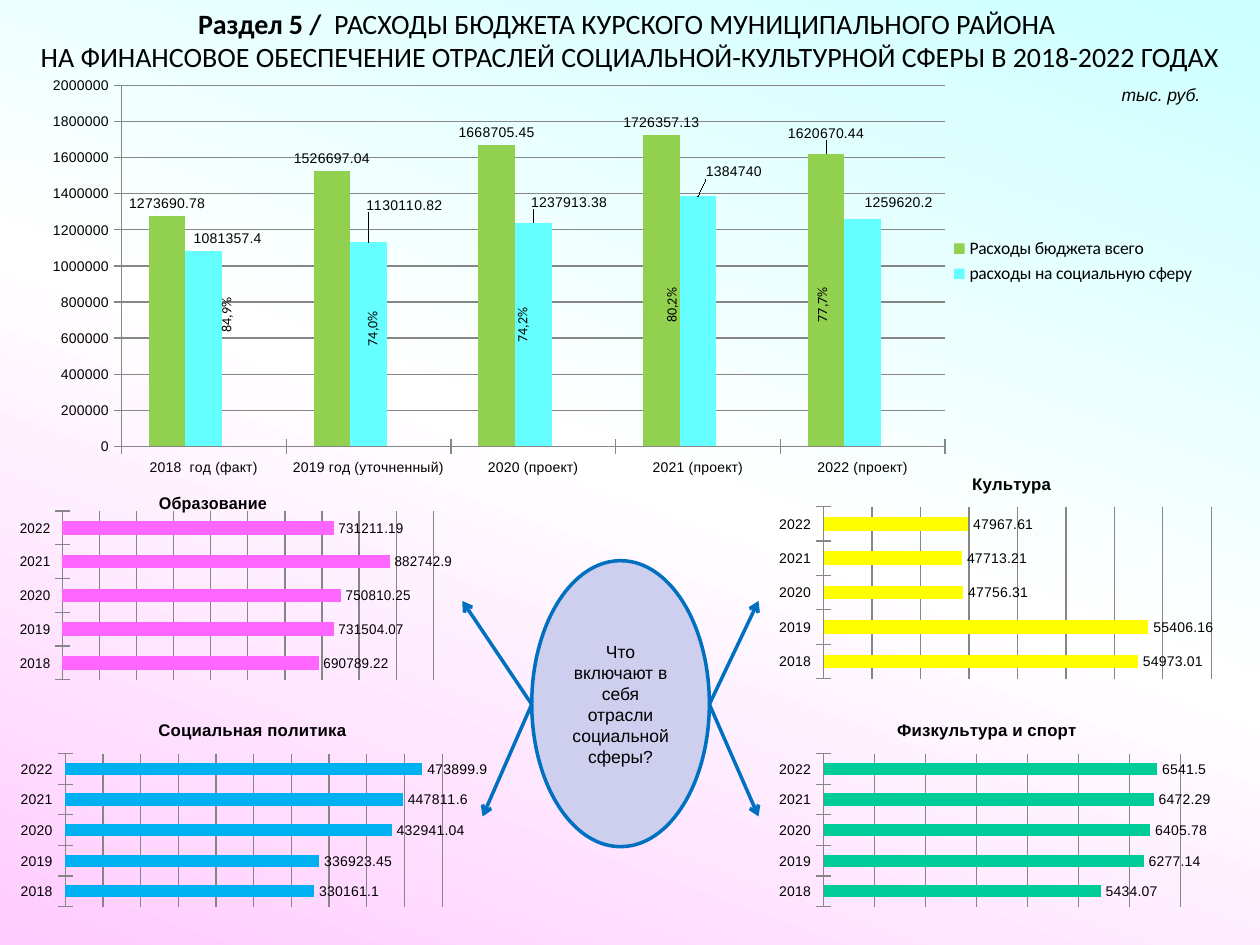
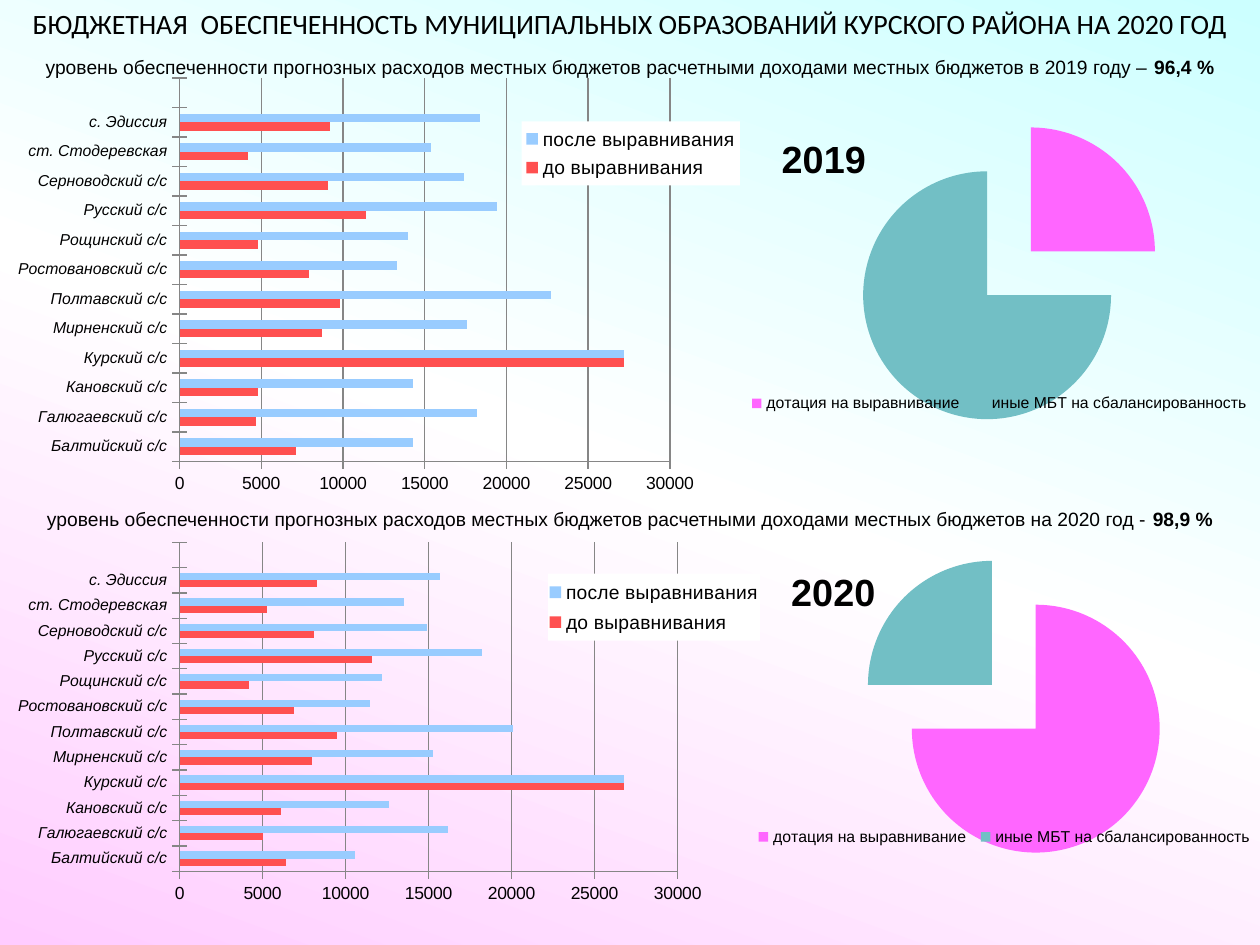
from lxml import etree
from pptx import Presentation
from pptx.chart.data import CategoryChartData
from pptx.dml.color import RGBColor
from pptx.enum.chart import XL_CHART_TYPE as ChartType
from pptx.enum.chart import XL_LABEL_POSITION as LabelPosition
from pptx.enum.chart import XL_LEGEND_POSITION as LegendPosition
from pptx.enum.chart import XL_TICK_MARK as TickMark
from pptx.enum.shapes import MSO_CONNECTOR as Connector
from pptx.enum.shapes import MSO_SHAPE as Shape
from pptx.enum.text import MSO_ANCHOR as Anchor
from pptx.enum.text import MSO_AUTO_SIZE as AutoSize
from pptx.enum.text import PP_ALIGN as Align
from pptx.oxml.ns import qn
from pptx.util import Emu, Pt

PX = 9144  # 100 px to the inch
COLORS = {
    "text": "000000", "white": "FFFFFF", "grid": "868686",
    "sky": "CCFFFF", "rose": "FFCCFF",
    "total": "92D050", "social": "66FFFF",
    "education": "FF66FF", "culture": "FFFF00", "policy": "00B0F0", "sport": "00CC99",
    "before": "FF5050", "after": "99CCFF",
    "grant": "FF66FF", "other": "72BFC5",
    "oval": "CECEEF", "arrow": "0070C0",
}
YEARS = ["2018", "2019", "2020", "2021", "2022"]
SETTLEMENTS = [
    "Балтийский с/с", "Галюгаевский с/с", "Кановский с/с", "Курский с/с",
    "Мирненский с/с", "Полтавский с/с", "Ростовановский с/с", "Рощинский с/с",
    "Русский с/с", "Серноводский с/с", "ст. Стодеревская", "с. Эдиссия",
]


def px(*lengths):
    return [Emu(length * PX) for length in lengths]


def rgb(name):
    return RGBColor.from_string(COLORS[name])


def style_font(font, size, face="Arial", bold=None, italic=None):
    font.size, font.name = Pt(size), face
    font.bold, font.italic = bold, italic
    font.color.rgb = rgb("text")


def add_runs(paragraph, runs, size, face="Arial", align=Align.CENTER, italic=None):
    """Each run is a (text, bold) pair."""
    paragraph.alignment = align
    for text, bold in runs:
        run = paragraph.add_run()
        run.text = text
        style_font(run.font, size, face, bold, italic)


# Slide parts

def set_background(master):
    fill = master.background.fill
    fill.gradient()
    fill.gradient_angle = 250
    stops = master._element.find(".//" + qn("a:gsLst"))
    for stop in list(stops):
        stops.remove(stop)
    for place, name in ((0, "sky"), (50, "white"), (100, "rose")):
        stop = etree.SubElement(stops, qn("a:gs"), pos=str(place * 1000))
        etree.SubElement(stop, qn("a:srgbClr"), val=COLORS[name])


def add_titled_slide(prs, height, lines):
    slide = prs.slides.add_slide(prs.slide_layouts[5])
    title = slide.shapes.title
    title.left, title.top, title.width, title.height = px(0, 0, 1000, height)
    frame = title.text_frame
    frame.vertical_anchor, frame.auto_size = Anchor.TOP, AutoSize.NONE
    for i, runs in enumerate(lines):
        paragraph = frame.paragraphs[0] if i == 0 else frame.add_paragraph()
        add_runs(paragraph, runs, 16, "Calibri")
    return slide


def add_text(slide, box, runs, size, rotation=0, **style):
    label = slide.shapes.add_textbox(*px(*box))
    label.rotation = rotation
    label.text_frame.word_wrap = True
    add_runs(label.text_frame.paragraphs[0], runs, size, **style)


def add_oval(slide, box, text):
    oval = slide.shapes.add_shape(Shape.OVAL, *px(*box))
    oval.shadow.inherit = False
    oval.fill.solid()
    oval.fill.fore_color.rgb = rgb("oval")
    oval.line.color.rgb, oval.line.width = rgb("arrow"), Pt(2)
    oval.text_frame.vertical_anchor = Anchor.MIDDLE
    oval.text_frame.word_wrap = True
    add_runs(oval.text_frame.paragraphs[0], [(text, None)], 10)


def add_arrow(slide, start, end):
    arrow = slide.shapes.add_connector(Connector.STRAIGHT, *px(*start, *end))
    arrow.line.color.rgb, arrow.line.width = rgb("arrow"), Pt(2)
    etree.SubElement(arrow.line._get_or_add_ln(), qn("a:tailEnd"), type="arrow")
    etree.SubElement(arrow._element.spPr, qn("a:effectLst"))


# Chart parts

def place(element, x, y, w=None, h=None, inner=False, offset=False):
    """Give a plot area, title, legend or data label its place as shares of the chart."""
    for old in element.findall(qn("c:layout")):
        element.remove(old)
    leading = [qn(tag) for tag in ("c:tx", "c:legendPos", "c:legendEntry", "c:idx")]
    layout = etree.Element(qn("c:layout"))
    element.insert(sum(child.tag in leading for child in element), layout)
    manual = etree.SubElement(layout, qn("c:manualLayout"))
    values = [("layoutTarget", "inner")] if inner else []
    if not offset:
        values += [("xMode", "edge"), ("yMode", "edge")]
    values += [("x", x), ("y", y), ("w", w), ("h", h)]
    for tag, value in values:
        if value is not None:
            etree.SubElement(manual, qn("c:" + tag), val=str(value))


def add_chart(slide, kind, box, categories, series, size, plot):
    """Each series is a (name, values) pair."""
    data = CategoryChartData()
    data.categories = categories
    for name, values in series:
        data.add_series(name, values)
    chart = slide.shapes.add_chart(kind, *px(*box), data).chart
    style_font(chart.font, size)
    chart.has_title = chart.has_legend = False
    place(chart._chartSpace.chart.plotArea, *plot, inner=True)
    return chart


def add_chart_title(chart, text, size, corner):
    chart.has_title = True
    title = chart.chart_title
    add_runs(title.text_frame.paragraphs[0], [(text, True)], size)
    place(title._element, *corner)


def add_legend(chart, box, size, face="Arial", hidden=None, filled=False):
    chart.has_legend = True
    legend = chart.legend
    legend.position, legend.include_in_layout = LegendPosition.RIGHT, False
    style_font(legend.font, size, face)
    element = legend._element
    if hidden is not None:
        entry = etree.Element(qn("c:legendEntry"))
        etree.SubElement(entry, qn("c:idx"), val=str(hidden))
        etree.SubElement(entry, qn("c:delete"), val="1")
        element.insert(1, entry)
    place(element, *box)
    if filled:
        shape = etree.Element(qn("c:spPr"))
        fill = etree.SubElement(shape, qn("a:solidFill"))
        etree.SubElement(fill, qn("a:srgbClr"), val=COLORS["white"])
        element.find(qn("c:txPr")).addprevious(shape)


def style_bars(chart, colors, scale, labels=False):
    plot = chart.plots[0]
    plot.gap_width, plot.overlap, plot.vary_by_categories = 150, 0, False
    for series, color in zip(plot.series, colors):
        series.invert_if_negative = False
        series.format.fill.solid()
        series.format.fill.fore_color.rgb = rgb(color)
        if labels:
            series.data_labels.show_value = True
            series.data_labels.position = LabelPosition.OUTSIDE_END
            style_font(series.data_labels.font, 8)
    values = chart.value_axis
    values.minimum_scale, values.maximum_scale, values.major_unit = scale
    values.has_major_gridlines = True
    lines = [values.major_gridlines.format.line]
    for axis in (chart.category_axis, values):
        axis.major_tick_mark, axis.minor_tick_mark = TickMark.CROSS, TickMark.NONE
        lines.append(axis.format.line)
    for line in lines:
        line.color.rgb, line.width = rgb("grid"), Pt(0.75)


def shift_label(series, index, dx, dy):
    label = series.points[index].data_label
    label.position = LabelPosition.OUTSIDE_END
    style_font(label.font, 8)
    for element in series._element.iter(qn("c:dLbl")):
        if element.find(qn("c:idx")).get("val") == str(index):
            place(element, dx, dy, offset=True)


def add_sector_chart(slide, box, title, values, color, scale, plot, title_left):
    chart = add_chart(slide, ChartType.BAR_CLUSTERED, box, YEARS, [(title, values)], 8, plot)
    add_chart_title(chart, title, 9.6, (title_left, 0.07))
    style_bars(chart, [color], scale, labels=True)
    chart.value_axis.visible = False


def add_levelling_chart(slide, box, before, after, plot, legend):
    series = [("до выравнивания", before + [None]), ("после выравнивания", after + [None])]
    chart = add_chart(slide, ChartType.BAR_CLUSTERED, box, SETTLEMENTS, series, 11, plot)
    style_bars(chart, ["before", "after"], (0, 30000, 5000))
    style_font(chart.category_axis.tick_labels.font, 9, italic=True)
    style_font(chart.value_axis.tick_labels.font, 10)
    add_legend(chart, legend, 11, filled=True)


def add_transfer_pie(slide, box, year, shares):
    kinds = ["дотация на выравнивание ", "иные МБТ на сбалансированность"]
    chart = add_chart(slide, ChartType.PIE, box, kinds, [(year, shares)], 18,
                      (0.12, 0, 0.798, 0.984))
    add_chart_title(chart, year, 21.6, (0.07, 0.03))
    add_legend(chart, (0.01, 0.87, 0.98, 0.07), 9)
    series = chart.plots[0].series[0]
    for i, color in enumerate(("grant", "other")):
        fill = series.points[i].format.fill
        fill.solid()
        fill.fore_color.rgb = rgb(color)
    explosion = etree.Element(qn("c:explosion"), val="25")
    series._element.find(qn("c:dPt")).addprevious(explosion)


# Slides

def build_spending_slide(prs):
    slide = add_titled_slide(prs, 64, [
        [("Раздел 5 /  ", True), ("РАСХОДЫ БЮДЖЕТА КУРСКОГО МУНИЦИПАЛЬНОГО РАЙОНА ", False)],
        [("НА ФИНАНСОВОЕ ОБЕСПЕЧЕНИЕ ОТРАСЛЕЙ СОЦИАЛЬНОЙ-КУЛЬТУРНОЙ СФЕРЫ В 2018-2022 ГОДАХ",
          False)]])

    # Whole budget and its social share
    periods = ["2018  год (факт)", "2019 год (уточненный)", "2020 (проект)",
               "2021 (проект)", "2022 (проект)"]
    budget = add_chart(slide, ChartType.COLUMN_CLUSTERED, (23, 55, 953, 328), periods, [
        ("Расходы бюджета всего", [1273690.78, 1526697.04, 1668705.45, 1726357.13, 1620670.44]),
        ("расходы на социальную сферу", [1081357.4, 1130110.82, 1237913.38, 1384740, 1259620.2]),
        ("", [None] * 5)], 8, (0.077, 0.039, 0.686, 0.874))
    style_bars(budget, ["total", "social", "white"], (0, 2000000, 200000), labels=True)
    add_legend(budget, (0.767, 0.397, 0.205, 0.135), 10, "Calibri", hidden=2)
    total, social, _ = budget.plots[0].series
    shift_label(total, 4, 0, -0.02)
    for i, (dx, dy) in enumerate([(0.02, 0), (0.03, -0.06), (0.03, -0.02),
                                  (0.03, -0.03), (0.03, -0.01)]):
        shift_label(social, i, dx, dy)
    for left, top, width, share in [(152, 234, 55, "84,9%"), (263, 240, 65, "74,0%"),
                                    (387, 242, 55, "74,2%"), (498, 219, 70, "80,2%"),
                                    (625, 226, 55, "77,7%")]:
        add_text(slide, (left, top, width, 24), [(share, None)], 8, rotation=270,
                 face="Calibri", align=Align.LEFT)
    add_text(slide, (843, 62, 157, 27), [("тыс. руб.", None)], 10, italic=True)

    # Four sectors around the question
    add_sector_chart(slide, (0, 375, 359, 180), "Образование",
                     [690789.22, 731504.07, 750810.25, 882742.9, 731211.19], "education",
                     (0, 1000000, 100000), (0.144, 0.17, 0.856, 0.745), 0.36)
    add_sector_chart(slide, (602, 359, 398, 195), "Культура",
                     [54973.01, 55406.16, 47756.31, 47713.21, 47967.61], "culture",
                     (42000, 58000, 2000), (0.13, 0.221, 0.773, 0.701), 0.42)
    add_sector_chart(slide, (0, 555, 398, 180), "Социальная политика",
                     [330161.1, 336923.45, 432941.04, 447811.6, 473899.9], "policy",
                     (0, 500000, 50000), (0.13, 0.24, 0.752, 0.675), 0.31)
    add_sector_chart(slide, (602, 555, 359, 180), "Физкультура и спорт",
                     [5434.07, 6277.14, 6405.78, 6472.29, 6541.5], "sport",
                     (0, 7000, 1000), (0.144, 0.24, 0.79, 0.675), 0.3)
    add_oval(slide, (422, 445, 141, 227), "Что включают в себя отрасли социальной сферы?")
    for start, end in [(563, (602, 477)), (422, (367, 477)), (422, (383, 648)), (563, (602, 648))]:
        add_arrow(slide, (start, 559), end)


def build_provision_slide(prs):
    slide = add_titled_slide(prs, 37, [[
        ("БЮДЖЕТНАЯ  ОБЕСПЕЧЕННОСТЬ МУНИЦИПАЛЬНЫХ ОБРАЗОВАНИЙ КУРСКОГО РАЙОНА НА 2020 ГОД",
         None)]])
    add_levelling_chart(
        slide, (0, 55, 750, 344),
        [7100, 4700, 4800, 27200, 8700, 9800, 7900, 4800, 11400, 9100, 4200, 9200],
        [14300, 18200, 14300, 27200, 17600, 22700, 13300, 14000, 19400, 17400, 15400, 18400],
        (0.19, 0.02, 0.519, 0.885), (0.552, 0.12, 0.231, 0.148))
    add_levelling_chart(
        slide, (0, 414, 750, 336),
        [6400, 5000, 6100, 26800, 8000, 9500, 6900, 4200, 11600, 8100, 5300, 8300],
        [10600, 16200, 12600, 26800, 15300, 20100, 11500, 12200, 18200, 14900, 13500, 15700],
        (0.19, 0.049, 0.527, 0.777), (0.58, 0.123, 0.224, 0.158))
    for top, period, level in [(39, "в 2019 году – ", "96,4 %"), (398, "на 2020 год - ", "98,9 %")]:
        add_text(slide, (0, top, 1000, 29), [
            ("уровень обеспеченности прогнозных расходов местных бюджетов "
             "расчетными доходами местных бюджетов " + period, None), (level, True)], 11)
    add_transfer_pie(slide, (586, 94, 414, 250), "2019", [25, 75])
    add_transfer_pie(slide, (594, 438, 406, 250), "2020", [75, 25])


def main():
    prs = Presentation()
    prs.slide_width, prs.slide_height = px(1000, 750)
    set_background(prs.slide_master)
    build_spending_slide(prs)
    build_provision_slide(prs)
    prs.save("out.pptx")


if __name__ == "__main__":
    main()
